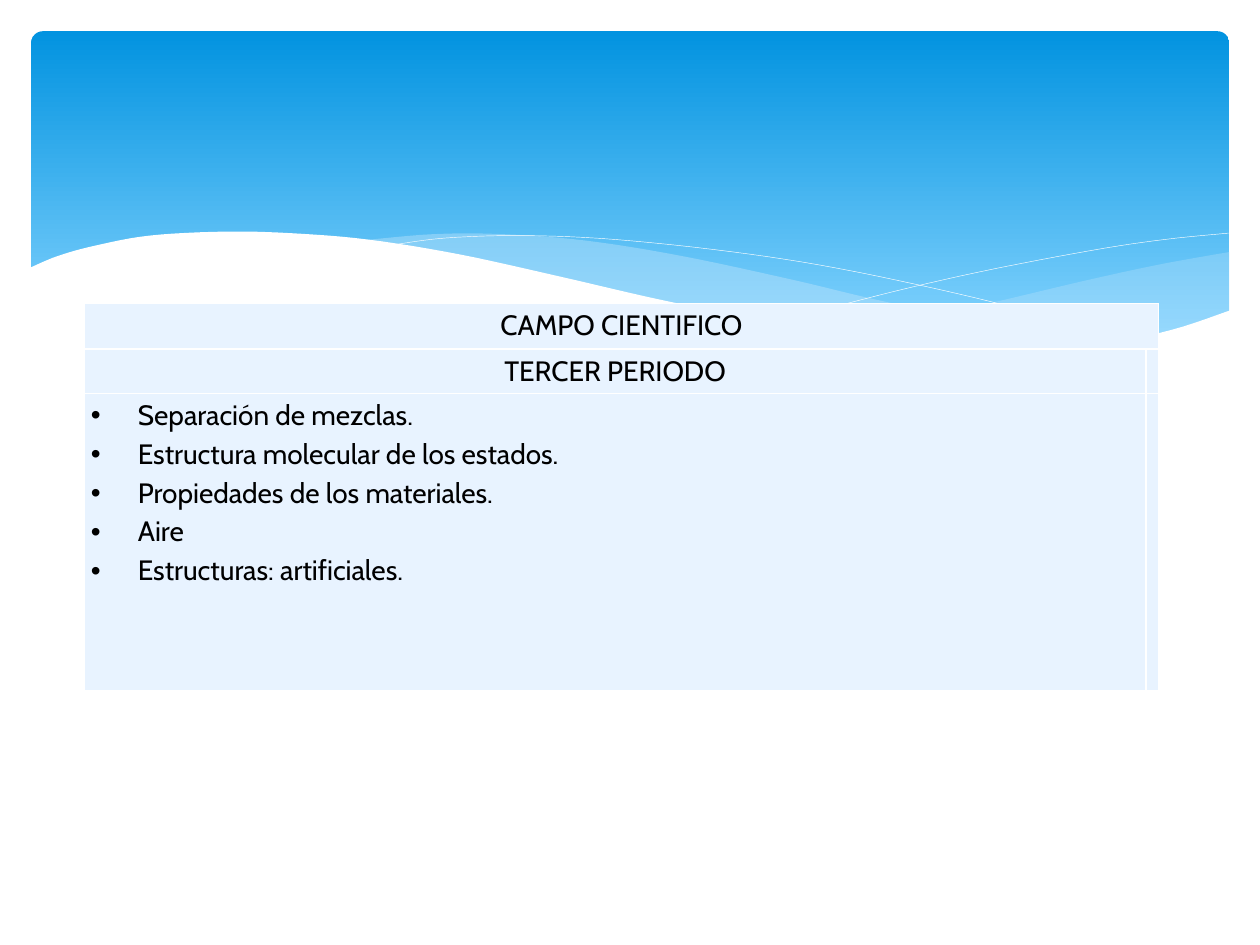
from lxml import etree
from pptx import Presentation
from pptx import util as u
from pptx.dml.color import RGBColor
from pptx.enum import shapes, text
from pptx.oxml.ns import qn

WHITE, ICE, MIST = "FFFFFF", "E8F3FF", "C6E7FC"


def color(value):
    return RGBColor.from_string(value)


def smooth(knots, steps=6):
    """Sample a Catmull-Rom curve that passes through the knots."""
    padded = [knots[0], *knots, knots[-1]]
    points = []
    for a, b, c, d in zip(padded, padded[1:], padded[2:], padded[3:]):
        for step in range(steps):
            t = step / steps
            points.append(tuple(
                (2 * q + (r - p) * t + (2 * p - 5 * q + 4 * r - s) * t ** 2
                 + (3 * q - p - 3 * r + s) * t ** 3) / 2
                for p, q, r, s in zip(a, b, c, d)))
    return points + [knots[-1]]


def write(paragraph, content, font="Cabin", size=16, ink="000000",
          align=None, spacing=1.15, after=0, bullet=None, indent=0):
    paragraph.line_spacing = spacing
    paragraph.space_after = u.Pt(after)
    paragraph.alignment = align
    run = paragraph.add_run()
    run.text = content
    run.font.name, run.font.size = font, u.Pt(size)
    run.font.color.rgb = color(ink)
    if bullet:
        properties = paragraph._p.get_or_add_pPr()
        properties.set("marL", str(u.Cm(indent)))
        properties.set("indent", str(-u.Cm(indent)))
        etree.SubElement(properties, qn("a:buFont")).set("typeface", "Arial")
        etree.SubElement(properties, qn("a:buChar")).set("char", bullet)


class Canvas:
    def __init__(self, slide):
        self.slide = slide

    def banner(self, left, top, width, height, first, last):
        shape = self.slide.shapes.add_shape(
            shapes.MSO_SHAPE.ROUNDED_RECTANGLE,
            u.Cm(left), u.Cm(top), u.Cm(width), u.Cm(height))
        shape.adjustments[0] = 0.034
        shape.shadow.inherit = False
        shape.line.fill.background()
        shape.fill.gradient()
        shape.fill.gradient_angle = 270
        stops = zip(shape.fill.gradient_stops, (first, last), (0, 0.9))
        for stop, shade, position in stops:
            stop.color.rgb = color(shade)
            stop.position = position

    def outline(self, points, closed):
        # The builder rounds to whole units, so points are converted first
        start, *rest = [(u.Cm(x), u.Cm(y)) for x, y in points]
        builder = self.slide.shapes.build_freeform(*start)
        builder.add_line_segments(rest, close=closed)
        shape = builder.convert_to_shape()
        shape.shadow.inherit = False
        return shape

    def wave(self, points, fill, opacity=100):
        shape = self.outline(points, True)
        shape.line.fill.background()
        shape.fill.solid()
        shape.fill.fore_color.rgb = color(fill)
        if opacity < 100:
            shade = shape.element.spPr.find(qn("a:solidFill"))[0]
            etree.SubElement(shade, qn("a:alpha")).set(
                "val", str(opacity * 1000))

    def curve(self, knots, ink=WHITE, width=0.25):
        shape = self.outline(smooth(knots), False)
        shape.fill.background()
        shape.line.color.rgb = color(ink)
        shape.line.width = u.Pt(width)

    def table(self, left, top, columns, rows):
        table = self.slide.shapes.add_table(
            len(rows), len(columns), u.Cm(left), u.Cm(top),
            u.Cm(sum(columns)), u.Cm(sum(rows))).table
        table.first_row = table.horz_banding = False
        for column, width in zip(table.columns, columns):
            column.width = u.Cm(width)
        for row, height in zip(table.rows, rows):
            row.height = u.Cm(height)
        for cell in table.iter_cells():
            self.style_cell(cell)
        return table

    def style_cell(self, cell, fill=ICE, border=WHITE):
        cell.margin_left = cell.margin_right = 0
        cell.margin_top = cell.margin_bottom = 0
        properties = cell._tc.get_or_add_tcPr()
        for side in ("lnL", "lnR", "lnT", "lnB"):
            line = etree.SubElement(properties, qn(f"a:{side}"))
            line.set("w", str(u.Pt(1)))
            solid = etree.SubElement(line, qn("a:solidFill"))
            etree.SubElement(solid, qn("a:srgbClr")).set("val", border)
        cell.fill.solid()
        cell.fill.fore_color.rgb = color(fill)

    def fill_cell(self, cell, lines, margin=0.13, **form):
        cell.margin_left = cell.margin_right = u.Cm(margin)
        frame = cell.text_frame
        for index, content in enumerate(lines):
            paragraph = frame.add_paragraph() if index else frame.paragraphs[0]
            write(paragraph, content, **form)


def main():
    presentation = Presentation()
    presentation.slide_width, presentation.slide_height = u.Cm(25.4), u.Cm(19.05)
    canvas = Canvas(presentation.slides.add_slide(presentation.slide_layouts[6]))

    # Blue banner
    canvas.banner(0.63, 0.63, 24.15, 6.86, "0293E0", "83D3FE")

    # Translucent waves
    right_top = [(24.79, 5.08), (23.39, 5.33), (21.87, 5.66), (19.79, 6.15),
                 (17.93, 6.53), (16.79, 6.73)]
    right_bottom = [(16.79, 6.73), (18.26, 6.91), (19.53, 7.04), (20.68, 7.06),
                    (21.92, 6.99), (23.19, 6.78), (24.1, 6.53), (24.79, 6.27)]
    canvas.wave(smooth(right_top) + smooth(right_bottom), MIST, 29)
    middle_top = [(22.68, 6.93), (20.5, 6.6), (17.93, 6.1), (15.98, 5.64),
                  (13.74, 5.16), (11.81, 4.85), (10.13, 4.72), (8.74, 4.72),
                  (7.26, 4.85)]
    middle_bottom = [(7.26, 4.85), (9.19, 5.16), (11.4, 5.64), (13.46, 6.1),
                     (15.7, 6.55), (17.65, 6.86), (19.33, 7.04), (20.78, 7.06),
                     (22.68, 6.93)]
    canvas.wave(smooth(middle_top) + smooth(middle_bottom), MIST, 40)

    # Thin white curves
    canvas.curve([(7.85, 4.95), (8.97, 4.8), (10.57, 4.75), (12.42, 4.83),
                  (14.78, 5.08), (16.89, 5.41), (19.3, 5.92), (21.11, 6.38),
                  (23.04, 6.91)])
    canvas.curve([(15.57, 6.53), (17.65, 5.97), (19.71, 5.49), (22, 5.05),
                  (23.47, 4.83), (24.77, 4.7)])

    # White wave over the lower edge of the banner
    crest = [(24.82, 6.25), (23.62, 6.65), (22.23, 6.93), (20.55, 7.04),
             (18.44, 6.91), (15.9, 6.55), (13.44, 6.07), (11.35, 5.59),
             (9.27, 5.13), (7.42, 4.83), (5.84, 4.7), (4.5, 4.67),
             (3.02, 4.75), (1.93, 4.95), (1.17, 5.16), (0.58, 5.41)]
    canvas.wave(smooth(crest) + [(0.58, 8.36), (24.82, 8.36)], WHITE)

    # Topics table
    table = canvas.table(1.7, 6.12, [21.4, 0.24], [0.92, 0.89, 5.99])
    table.cell(0, 0).merge(table.cell(0, 1))
    center = text.PP_ALIGN.CENTER
    canvas.fill_cell(table.cell(0, 0), ["CAMPO CIENTIFICO"], margin=0.08,
                     align=center, after=10)
    canvas.fill_cell(table.cell(1, 0), ["TERCER PERIODO"], align=center)
    canvas.fill_cell(table.cell(2, 0), [
        "Separación de mezclas.",
        "Estructura molecular de los estados.",
        "Propiedades de los materiales.",
        "Aire",
        "Estructuras: artificiales.",
    ], bullet="•", indent=0.95)
    presentation.save("out.pptx")


if __name__ == "__main__":
    main()
